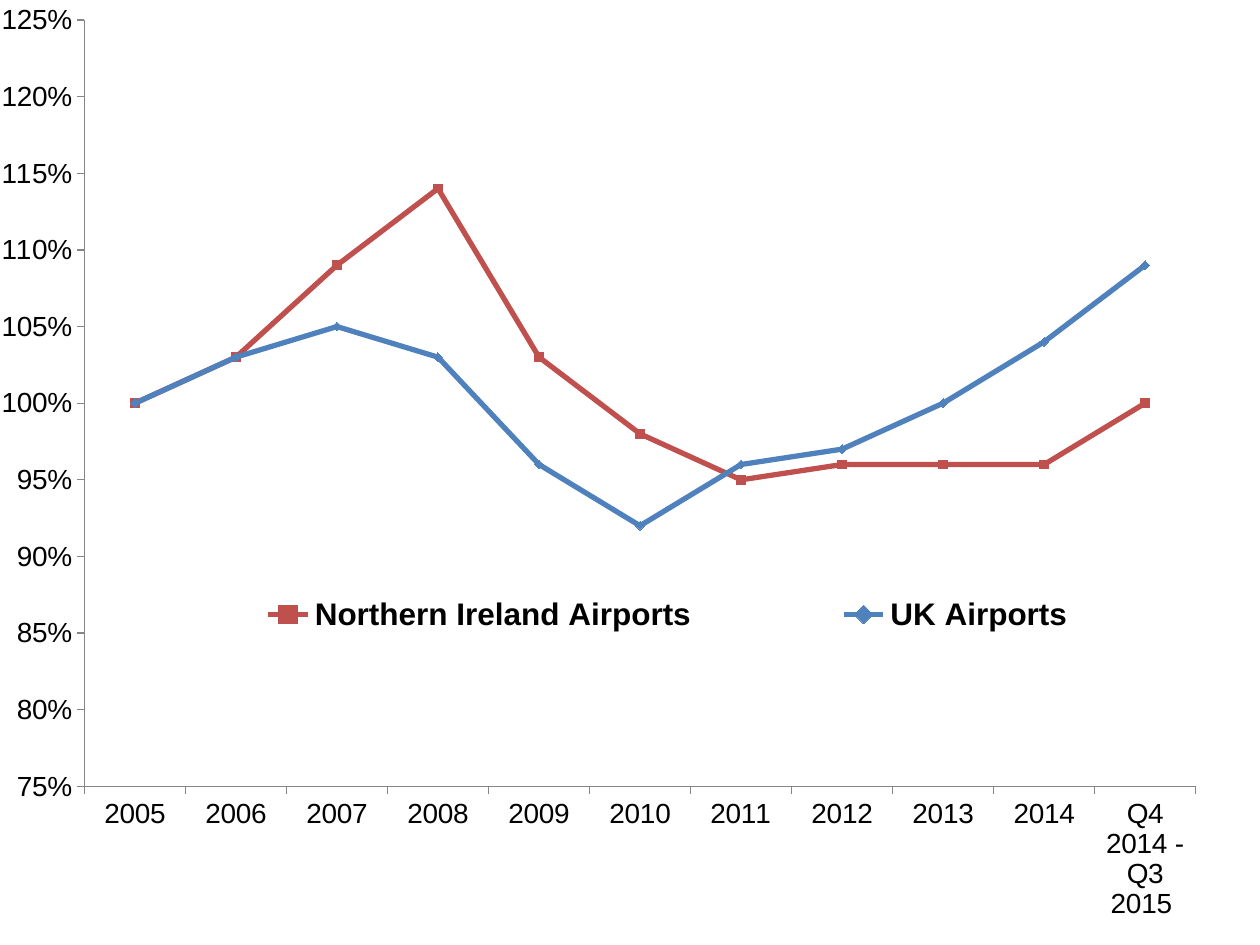
"""Build a slide with a line chart of airport passenger indices."""
import pptx
import pptx.chart.data
import pptx.dml.color
import pptx.enum.chart
import pptx.oxml
import pptx.oxml.ns
import pptx.util
from pptx.util import Inches

CHART_ENUM = pptx.enum.chart


def color(value):
    return pptx.dml.color.RGBColor.from_string(value)


def place(element, target, box):
    layout = element.find(pptx.oxml.ns.qn("c:layout"))
    if layout is not None:
        element.remove(layout)
    modes = '<c:xMode val="edge"/><c:yMode val="edge"/>'
    sizes = "".join(f'<c:{name} val="{value}"/>' for name, value in zip("xywh", box))
    layout = pptx.oxml.parse_xml(
        f'<c:layout {pptx.oxml.ns.nsdecls("c")}><c:manualLayout>'
        f"{target}{modes}{sizes}</c:manualLayout></c:layout>"
    )
    if target:
        element.insert(0, layout)
    else:
        element.find(pptx.oxml.ns.qn("c:legendPos")).addnext(layout)


presentation = pptx.Presentation()
presentation.slide_width = Inches(10)
presentation.slide_height = Inches(7.5)
slide = presentation.slides.add_slide(presentation.slide_layouts[6])

years = [str(year) for year in range(2005, 2015)]
airports = {
    "Northern Ireland Airports": {
        "values": [1, 1.03, 1.09, 1.14, 1.03, 0.98, 0.95, 0.96, 0.96, 0.96, 1],
        "color": "C0504D",
        "marker": CHART_ENUM.XL_MARKER_STYLE.SQUARE,
    },
    "UK Airports": {
        "values": [1, 1.03, 1.05, 1.03, 0.96, 0.92, 0.96, 0.97, 1, 1.04, 1.09],
        "color": "4F81BD",
        "marker": CHART_ENUM.XL_MARKER_STYLE.DIAMOND,
    },
}
chart_data = pptx.chart.data.CategoryChartData(number_format="0%")
chart_data.categories = years + ["Q4 2014 - Q3 2015 "]
for name, airport in airports.items():
    chart_data.add_series(name, airport["values"])

chart = slide.shapes.add_chart(
    CHART_ENUM.XL_CHART_TYPE.LINE_MARKERS,
    Inches(0), Inches(0), Inches(10), Inches(7.29), chart_data,
).chart
chart.has_title = False
chart.has_legend = True
chart.legend.position = CHART_ENUM.XL_LEGEND_POSITION.RIGHT
chart.legend.include_in_layout = False
chart.plots[0].vary_by_categories = False

fonts = [
    (chart.font, {"name": "Calibri", "size": pptx.util.Pt(10)}),
    (chart.category_axis.tick_labels.font, {"name": "Arial", "size": pptx.util.Pt(16)}),
    (chart.value_axis.tick_labels.font, {"name": "Arial", "size": pptx.util.Pt(16)}),
    (chart.legend.font, {"name": "Arial", "size": pptx.util.Pt(18), "bold": True}),
]
for font, format_values in fonts:
    for attribute, value in format_values.items():
        setattr(font, attribute, value)
    font.color.rgb = color("000000")

for axis in (chart.category_axis, chart.value_axis):
    axis.has_major_gridlines = False
    axis.major_tick_mark = CHART_ENUM.XL_TICK_MARK.OUTSIDE
    axis.minor_tick_mark = CHART_ENUM.XL_TICK_MARK.NONE
    axis.format.line.color.rgb = color("868686")
    axis.format.line.width = pptx.util.Pt(0.75)

value_axis_format = {"minimum_scale": 0.75, "maximum_scale": 1.25, "major_unit": 0.05}
for attribute, value in value_axis_format.items():
    setattr(chart.value_axis, attribute, value)
chart.value_axis.tick_labels.number_format = "0%"
chart.value_axis.tick_labels.number_format_is_linked = False

for series, airport in zip(chart.plots[0].series, airports.values()):
    series.smooth = False
    series.format.line.width = pptx.util.Pt(3)
    series.format.line.color.rgb = color(airport["color"])
    series.marker.style = airport["marker"]
    series.marker.size = 5
    series.marker.format.fill.solid()
    series.marker.format.fill.fore_color.rgb = color(airport["color"])
    series.marker.format.line.color.rgb = color(airport["color"])

plot_area = chart.plots[0]._element.getparent()
place(plot_area, '<c:layoutTarget val="inner"/>', [0.067, 0.022, 0.882, 0.842])
place(chart.legend._element, "", [0.1, 0.63, 0.86, 0.09])

presentation.save("out.pptx")
